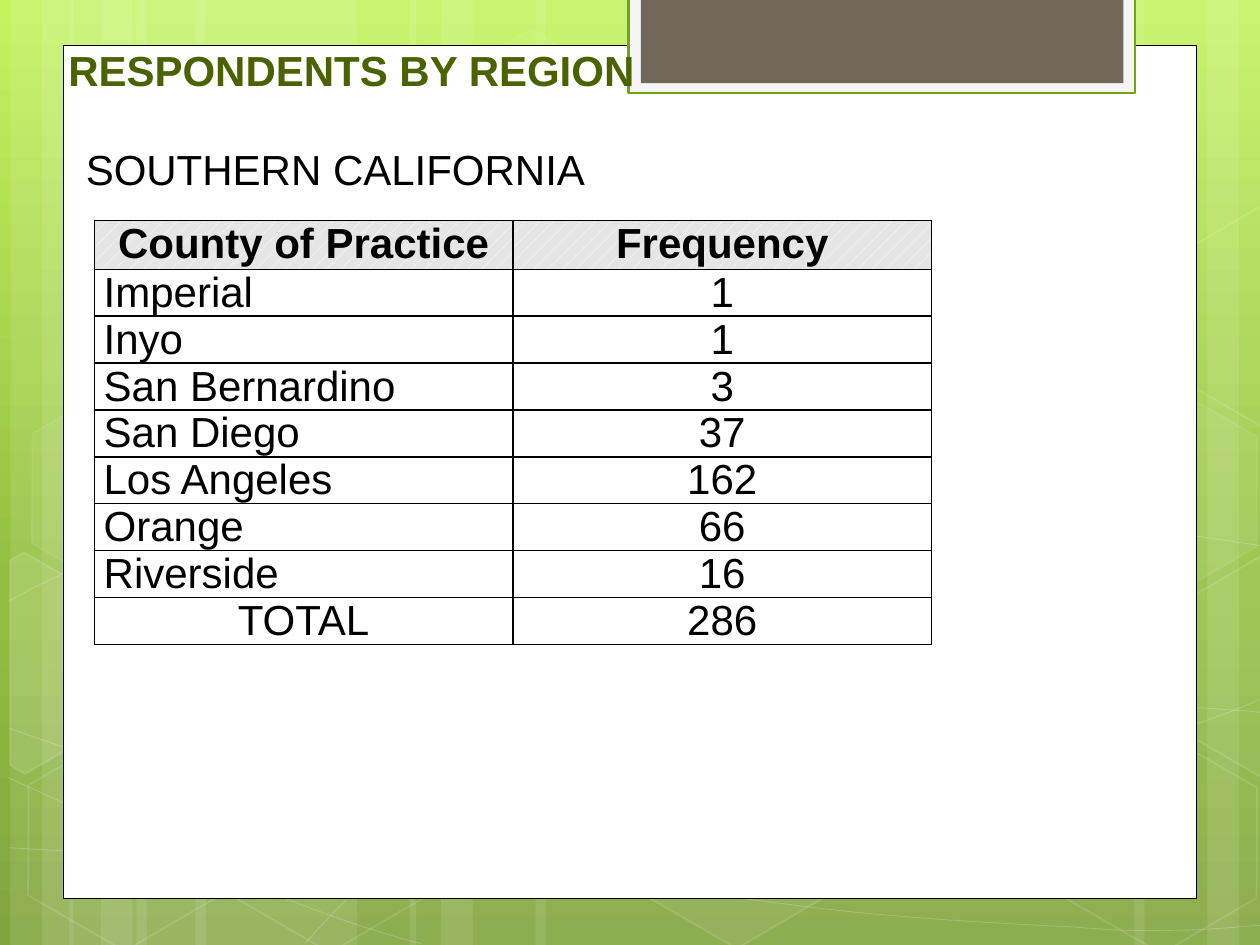
"""Builds the slide listing Southern California respondents by county."""
import copy
import math

import pptx
import pptx.dml.color
import pptx.enum.dml
import pptx.enum.shapes
import pptx.enum.text
import pptx.oxml
import pptx.oxml.ns
import pptx.util

Cm, Pt = pptx.util.Cm, pptx.util.Pt
RGB = pptx.dml.color.RGBColor.from_string
qn = pptx.oxml.ns.qn
DRAWING = pptx.oxml.ns.nsdecls("a")
SHAPE = pptx.enum.shapes.MSO_SHAPE
ALIGN = pptx.enum.text.PP_ALIGN

THEME = {
    "backdrop": [("C3F35F", 0), ("93BF3F", 0.62), ("81A53E", 1)],
    "white": "FFFFFF", "ink": "000000", "heading": "4A6300",
    "tab": "F5F5F5", "tab_edge": "74A510", "tab_core": "71685A",
    "header": "E5E5E5", "font": "Arial", "size": Pt(24),
}
BODY_FONT = {"name": THEME["font"], "size": THEME["size"], "bold": False}
BOLD_FONT = {**BODY_FONT, "bold": True}


def apply_format(target, values, color=None):
    for attribute, value in values.items():
        setattr(target, attribute, value)
    if color:
        target.color.rgb = RGB(color)


def paint(shape, fill=None, edge=None, weight=1, fill_alpha=100, edge_alpha=100):
    shape.shadow.inherit = False
    alphas = []
    for area, color, alpha in ((shape.fill, fill, fill_alpha),
                               (shape.line.fill, edge, edge_alpha)):
        if color and alpha:
            area.solid()
            area.fore_color.rgb = RGB(color)
            alphas.append(alpha)
        else:
            area.background()
    if edge:
        shape.line.width = Pt(weight)
    for tint, alpha in zip(shape._element.spPr.iter(qn("a:srgbClr")), alphas):
        if alpha < 100:
            tint.append(pptx.oxml.parse_xml(f'<a:alpha {DRAWING} val="{alpha * 1000}"/>'))


deck = pptx.Presentation()
deck.slide_width, deck.slide_height = Cm(25.4), Cm(19.05)
slide = deck.slides.add_slide(deck.slide_layouts[5])
shapes = slide.shapes

backdrop = slide.background.fill
backdrop.gradient()
backdrop.gradient_angle = 270
stop_list = slide._element.find(".//" + qn("a:gsLst"))
stop_list.insert(1, copy.deepcopy(stop_list[0]))
for stop, (color, position) in zip(backdrop.gradient_stops, THEME["backdrop"]):
    stop.color.rgb = RGB(color)
    stop.position = position

stripes = [(2.75, 4.45), (0.21, 1.27), (0.85, 2.11), (3.94, 4.45), (1.4, 1.27), (2.04, 2.11),
           (18.62, 4.45), (24.34, 1.27), (22.87, 2.11), (10.8, 7.82), (8.26, 1.27), (8.89, 2.11)]
for left, width in stripes:
    stripe = shapes.add_shape(SHAPE.RECTANGLE, Cm(left), 0, Cm(width), deck.slide_height)
    paint(stripe, THEME["white"], fill_alpha=10)

waves = [
    [(0.18, 17.09), (1.55, 17.17), (2.92, 17.25), (4.83, 17.22), (6.73, 17.2), (9.09, 17.15),
     (11.63, 16.89), (14.17, 16.64), (17.78, 16.15), (20.12, 15.67), (22.43, 15.19),
     (24.82, 14.43), (25.58, 14)],
    [(0.18, 12.12), (0.91, 11.71), (1.65, 11.33), (3.07, 10.95), (4.52, 10.57), (6.58, 10.06),
     (8.81, 9.83), (11.07, 9.65), (13.82, 9.63), (16.61, 9.83), (19.41, 10.03),
     (24.05, 10.82), (25.58, 11.02)],
    [(0.15, 15.67), (3.23, 17.07), (6.27, 18.47), (8.48, 19.02)],
    [(0.18, 14.68), (0.97, 14.96), (1.78, 15.24), (3.25, 15.65), (4.72, 16.03), (6.93, 16.66),
     (9.07, 17.09), (11.18, 17.53), (13.84, 17.98), (15.95, 18.24), (18.06, 18.52),
     (20.32, 18.62), (21.67, 18.69), (22.99, 18.8), (23.34, 18.75), (24, 18.75),
     (24.66, 18.72), (25.12, 18.67), (25.58, 18.64)],
    [(6.15, 19.02), (6.6, 18.52), (7.06, 18.01), (7.67, 17.55), (8.28, 17.09), (9.14, 16.59),
     (9.86, 16.23), (10.57, 15.88), (11, 15.72), (11.94, 15.47), (12.85, 15.22),
     (14.55, 14.86), (15.44, 14.68), (16.36, 14.5), (16.48, 14.5), (17.27, 14.45),
     (18.03, 14.38), (19.3, 14.3), (20.17, 14.27), (21.06, 14.25), (22.5, 14.27),
     (22.5, 14.27), (23.1, 14.27), (23.6, 14.27), (24.21, 14.27), (24.66, 14.3),
     (25.1, 14.33), (25.32, 14.35), (25.55, 14.38), (25.48, 14.35), (25.55, 14.38)],
]
for knots in waves:
    track = [(Cm(x), Cm(y)) for x, y in knots]
    if len(track) % 3 == 1:
        tail = []
    else:
        tail = [track[-1]] * (3 - (len(track) - 1) % 3)
    builder = shapes.build_freeform(*track[0])
    builder.add_line_segments(track[1:] + tail, close=False)
    wave = builder.convert_to_shape()
    segments = list(wave._element.iter(qn("a:lnTo")))
    for first in range(0, len(segments), 3):
        curve = pptx.oxml.parse_xml(f"<a:cubicBezTo {DRAWING}/>")
        segments[first].addprevious(curve)
        for segment in segments[first:first + 3]:
            curve.append(segment[0])
            segment.getparent().remove(segment)
    paint(wave, edge=THEME["white"], weight=0.5, edge_alpha=20)

hexagons = [(8.48, 0.91, 4, 8), (12.62, 14.96, 6, 12), (0.28, 15.01, 0, 12), (0.36, 7.92, 7, 8),
            (4.42, 15.04, 0, 12), (19.13, 11.51, 10, 12), (21.18, 15.06, 0, 12),
            (21.18, 7.98, 7, 8)]
for left, top, fill_alpha, edge_alpha in hexagons:
    hexagon = shapes.add_shape(SHAPE.HEXAGON, Cm(left), Cm(top), Cm(4.45), Cm(3.86))
    hexagon.rotation = 30
    hexagon.adjustments[0] = 0.285
    paint(hexagon, THEME["white"], THEME["white"], 1, fill_alpha, edge_alpha)

TILT = math.radians(30)
cut_hexagons = [
    (10, (0.91, 13.59), [(0.2, 11.3), (0.48, 11.13), (2.44, 12.24), (2.41, 14.48),
                         (0.51, 15.6), (0.2, 15.42)]),
    (4, (25.02, 13.21), [(23.52, 12.32), (25.43, 11.2), (25.63, 11.33), (25.63, 15.57),
                         (25.45, 15.67), (23.52, 14.55)]),
    (0, (25.02, 6.12), [(23.52, 5.26), (25.43, 4.14), (25.65, 4.27), (25.63, 8.51),
                        (25.45, 8.61), (23.52, 7.49)]),
]
for fill_alpha, (pivot_x, pivot_y), corners in cut_hexagons:
    outline = [(Cm(pivot_x + (x - pivot_x) * math.cos(TILT) + (y - pivot_y) * math.sin(TILT)),
                Cm(pivot_y - (x - pivot_x) * math.sin(TILT) + (y - pivot_y) * math.cos(TILT)))
               for x, y in corners]
    builder = shapes.build_freeform(*outline[0])
    builder.add_line_segments(outline[1:], close=True)
    cut_hexagon = builder.convert_to_shape()
    cut_hexagon.rotation = 30
    paint(cut_hexagon, THEME["white"], THEME["white"], 1, fill_alpha, 12)

panels = [((1.27, 0.91, 22.86, 17.2), "white", THEME["ink"], 0.5),
          ((12.67, -0.05, 10.21, 1.93), "tab", THEME["tab_edge"], 1.25),
          ((12.92, -0.05, 9.73, 1.73), "tab_core", None, 0)]
for box, color, edge, weight in panels:
    panel = shapes.add_shape(SHAPE.RECTANGLE, *map(Cm, box))
    paint(panel, THEME[color], edge, weight)

counties = [("County of Practice", "Frequency"), ("Imperial", "1"), ("Inyo", "1"),
            ("San Bernardino", "3"), ("San Diego", "37"), ("Los Angeles", "162"),
            ("Orange", "66"), ("Riverside", "16"), ("TOTAL", "286")]
frequencies = shapes.add_table(len(counties), 2, Cm(1.9), Cm(4.44), Cm(16.88), Cm(8.55)).table
apply_format(frequencies, {"first_row": False, "horz_banding": False})
CELL = {"margin_left": Cm(0.19), "margin_right": Cm(0.19), "margin_top": 0, "margin_bottom": 0}
for row, entries in enumerate(counties):
    is_header = row == 0
    frequencies.rows[row].height = Cm(0.99 if is_header else 0.94)
    for column, entry in enumerate(entries):
        cell = frequencies.cell(row, column)
        cell.text = entry
        apply_format(cell, CELL)
        line = cell.text_frame.paragraphs[0]
        centred = is_header or column == 1 or entry == "TOTAL"
        line.alignment = ALIGN.CENTER if centred else ALIGN.LEFT
        apply_format(line.runs[0].font, BOLD_FONT if is_header else BODY_FONT, THEME["ink"])
        if is_header:
            cell.fill.patterned()
            cell.fill.pattern = pptx.enum.dml.MSO_PATTERN.PERCENT_10
            cell.fill.fore_color.rgb = RGB(THEME["white"])
            cell.fill.back_color.rgb = RGB(THEME["header"])
        else:
            cell.fill.background()
        for index, side in enumerate("LRTB"):
            cell._tc.get_or_add_tcPr().insert(index, pptx.oxml.parse_xml(
                f'<a:ln{side} {DRAWING} w="{Pt(1)}"><a:solidFill>'
                f'<a:srgbClr val="{THEME["ink"]}"/></a:solidFill></a:ln{side}>'))

region = shapes.add_textbox(Cm(1.48), Cm(2.76), Cm(13.54), Cm(2.3)).text_frame
apply_format(region, {"word_wrap": True, "text": "SOUTHERN CALIFORNIA"})
apply_format(region.paragraphs[0].runs[0].font, BODY_FONT, THEME["ink"])

heading = shapes.title
apply_format(heading, {"left": Cm(1.05), "top": Cm(1.07), "width": Cm(12.07), "height": Cm(0.97)})
apply_format(heading.text_frame, {
    "text": "RESPONDENTS BY REGION", "word_wrap": True,
    "vertical_anchor": pptx.enum.text.MSO_ANCHOR.BOTTOM,
    "auto_size": pptx.enum.text.MSO_AUTO_SIZE.NONE})
heading.text_frame.paragraphs[0].alignment = ALIGN.CENTER
apply_format(heading.text_frame.paragraphs[0].runs[0].font, BOLD_FONT, THEME["heading"])
shapes._spTree.append(heading._element)

deck.save("out.pptx")
